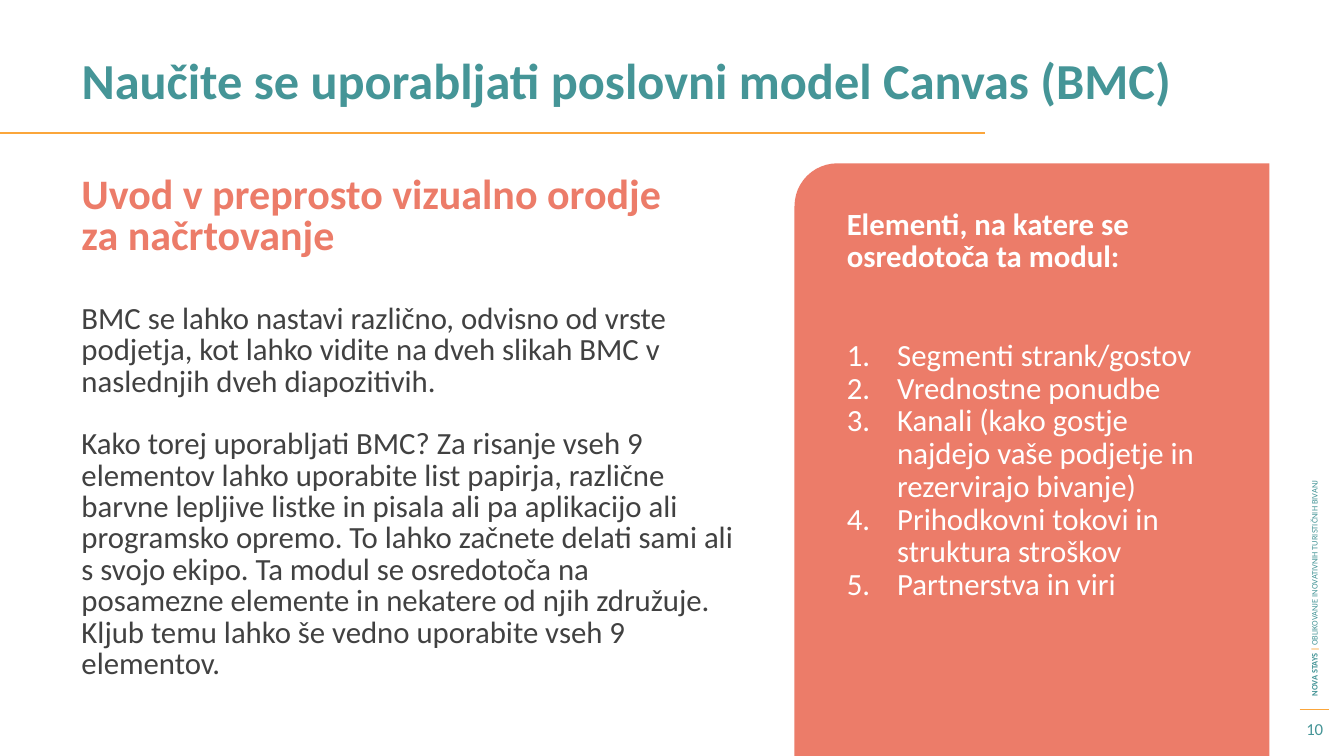
from lxml.etree import SubElement
from pptx import Presentation
from pptx.dml.color import RGBColor
from pptx.enum.shapes import MSO_CONNECTOR as Connector, MSO_SHAPE as Preset
from pptx.enum.text import MSO_ANCHOR as Anchor, MSO_AUTO_SIZE as AutoSize, PP_ALIGN as Align
from pptx.oxml.ns import qn
from pptx.util import Inches, Pt

FONT = "Calibri"
COLORS = {
    "teal": "459597",
    "coral": "EC7C69",
    "orange": "FBA63B",
    "text": "414141",
    "white": "FFFFFF",
}
INTRO = [
    "BMC se lahko nastavi različno, odvisno od vrste podjetja, kot lahko vidite na dveh "
    "slikah BMC v naslednjih dveh diapozitivih.",
    "Kako torej uporabljati BMC? Za risanje vseh 9 elementov lahko uporabite list papirja, "
    "različne barvne lepljive listke in pisala ali pa aplikacijo ali programsko opremo. "
    "To lahko začnete delati sami ali s svojo ekipo. Ta modul se osredotoča na posamezne "
    "elemente in nekatere od njih združuje. Kljub temu lahko še vedno uporabite vseh 9 elementov.",
]
ELEMENTS = [
    "Segmenti strank/gostov",
    "Vrednostne ponudbe",
    "Kanali (kako gostje najdejo vaše podjetje in rezervirajo bivanje)",
    "Prihodkovni tokovi in struktura stroškov",
    "Partnerstva in viri",
]


def rgb(name):
    """Return the named colour."""
    return RGBColor.from_string(COLORS[name])


def format_run(run, size, color, bold=False):
    """Set the font of a run."""
    run.font.name = FONT
    run.font.size = Pt(size)
    run.font.bold = bold
    run.font.color.rgb = rgb(color)


def write_paragraphs(shape, texts, size, color, bold=False, spacing=None, gap=0):
    """Fill a shape with paragraphs that are set apart by a gap in points."""
    frame = shape.text_frame
    frame.word_wrap = True
    frame.text = "\n".join(texts)
    for index, paragraph in enumerate(frame.paragraphs):
        paragraph.alignment = Align.LEFT
        paragraph.space_before = Pt(gap if index else 0)
        if spacing:
            paragraph.line_spacing = Pt(spacing)
        for run in paragraph.runs:
            format_run(run, size, color, bold)


def add_text(slide, box, texts, size, color, **style):
    """Add a text box and return it."""
    shape = slide.shapes.add_textbox(*map(Inches, box))
    write_paragraphs(shape, texts, size, color, **style)
    return shape


def add_title(slide, text):
    """Place and format the slide title."""
    title = slide.shapes.title
    title.left, title.top, title.width, title.height = map(Inches, (0.71, 0.52, 11.1, 0.88))
    write_paragraphs(title, [text], 36, "teal", bold=True, spacing=37.2)
    title.text_frame.vertical_anchor = Anchor.TOP
    title.text_frame.auto_size = AutoSize.NONE


def add_rule(slide, left, right, y, weight):
    """Add a horizontal orange line."""
    line = slide.shapes.add_connector(
        Connector.STRAIGHT, Inches(left), Inches(y), Inches(right), Inches(y))
    line.line.color.rgb = rgb("orange")
    line.line.width = Pt(weight)
    SubElement(line._element.spPr, qn("a:effectLst"))


def add_panel(slide, left, top, width, height):
    """Add a coral panel whose top left corner is round, by a quarter turn."""
    shift = (width - height) / 2
    panel = slide.shapes.add_shape(
        Preset.ROUND_1_RECTANGLE,
        Inches(left + shift), Inches(top - shift), Inches(height), Inches(width))
    panel.rotation = 270
    panel.adjustments[0] = 0.09
    panel.shadow.inherit = False
    panel.fill.solid()
    panel.fill.fore_color.rgb = rgb("coral")
    panel.line.fill.background()


def number_paragraph(paragraph):
    """Number a paragraph with a hanging indent."""
    properties = paragraph._p.get_or_add_pPr()
    properties.set("marL", str(Inches(0.5)))
    properties.set("indent", str(-Inches(0.5)))
    SubElement(properties, qn("a:buFont"), typeface="+mj-lt")
    SubElement(properties, qn("a:buAutoNum"), type="arabicPeriod")


def add_element_list(slide):
    """Add the heading and the numbered elements on the panel."""
    heading = "Elementi, na katere se osredotoča ta modul:"
    shape = add_text(slide, (8.3, 2.02, 3.81, 3.59), [heading, *ELEMENTS], 22, "white",
                     spacing=23.4)
    first, *items = shape.text_frame.paragraphs
    first.runs[0].font.bold = True
    items[0].space_before = Pt(46.8)
    for paragraph in items:
        number_paragraph(paragraph)


def add_side_label(slide):
    """Add the vertical label at the right edge."""
    shape = slide.shapes.add_textbox(*map(Inches, (10.15, 4.02, 5.77, 0.2)))
    shape.rotation = 270
    shape.text_frame.word_wrap = True
    shape.text_frame.vertical_anchor = Anchor.MIDDLE
    paragraph = shape.text_frame.paragraphs[0]
    for text, color, bold in (
        ("NOVA STAYS ", "teal", True),
        ("| ", "orange", True),
        ("OBLIKOVANJE INOVATIVNIH TURISTIČNIH BIVANJ", "teal", False),
    ):
        run = paragraph.add_run()
        run.text = text
        format_run(run, 6, color, bold)


def add_page_number(slide, number):
    """Add the page number below the side label."""
    shape = add_text(slide, (12.78, 7.06, 0.52, 0.34), [number], 12, "teal")
    shape.text_frame.vertical_anchor = Anchor.MIDDLE
    shape.text_frame.paragraphs[0].alignment = Align.CENTER


def main():
    """Build the slide and save it."""
    presentation = Presentation()
    presentation.slide_width = Inches(13.33)
    presentation.slide_height = Inches(7.5)
    slide = presentation.slides.add_slide(presentation.slide_layouts[5])
    add_rule(slide, 12.89, 13.18, 7.04, 0.75)
    add_side_label(slide)
    add_title(slide, "Naučite se uporabljati poslovni model Canvas (BMC)")
    add_text(slide, (0.71, 1.71, 6.14, 0.88),
             ["Uvod v preprosto vizualno orodje za načrtovanje"], 30, "coral",
             bold=True, spacing=29)
    add_rule(slide, 0, 9.77, 1.32, 1.5)
    add_page_number(slide, "10")
    add_text(slide, (0.71, 2.97, 6.68, 4), INTRO, 22, "text", spacing=22.4, gap=22.4)
    add_panel(slide, 7.88, 1.62, 4.71, 5.88)
    add_element_list(slide)
    presentation.save("out.pptx")


if __name__ == "__main__":
    main()
